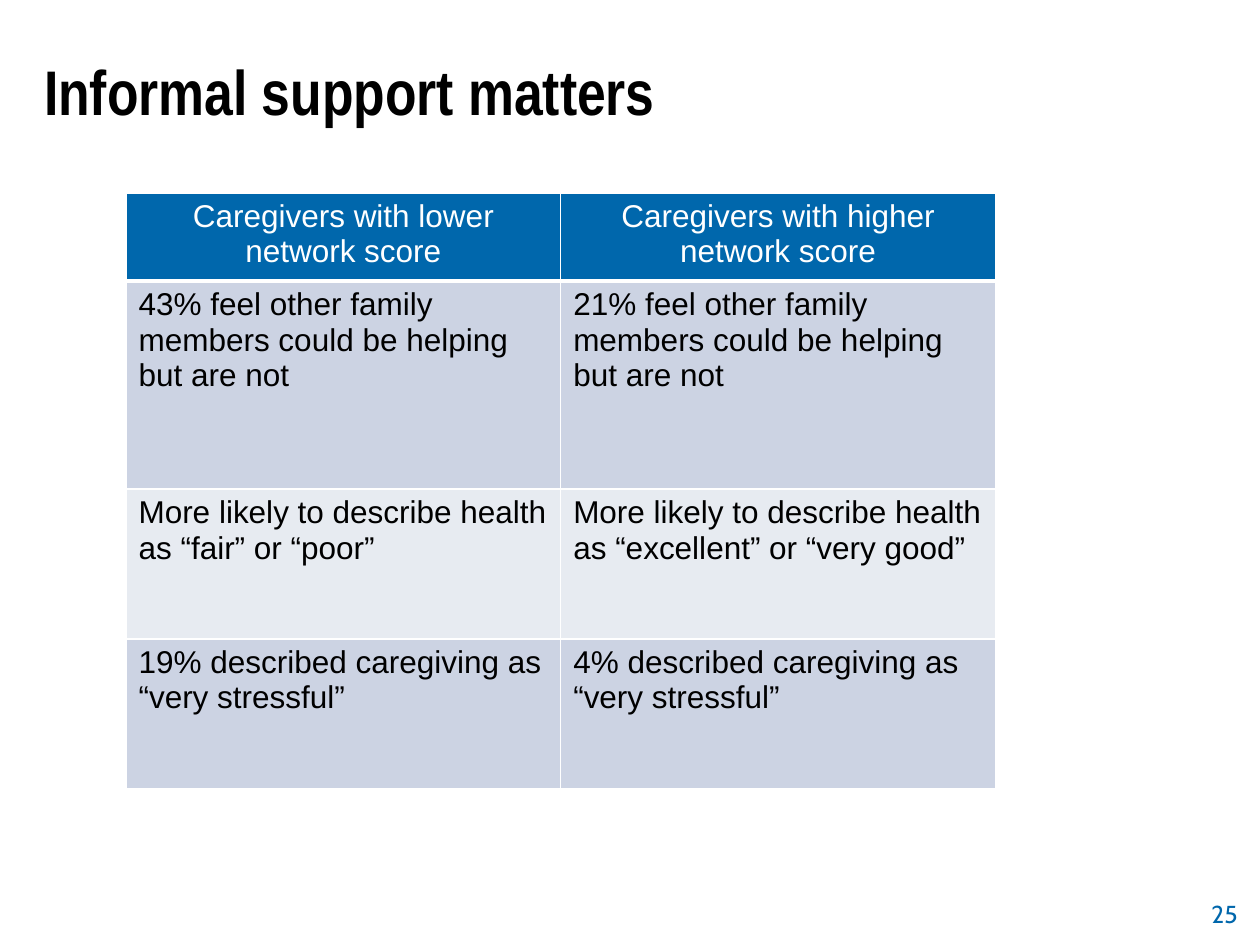
from dataclasses import dataclass

from lxml.etree import SubElement
from pptx import Presentation
from pptx.dml.color import RGBColor
from pptx.enum.text import MSO_ANCHOR, PP_ALIGN
from pptx.oxml.ns import qn
from pptx.util import Inches, Pt


@dataclass(frozen=True)
class Theme:
    blue: str = "0067AC"
    white: str = "FFFFFF"
    black: str = "000000"
    bands: tuple = ("CCD3E3", "E7EBF1")
    title_size: int = 36
    body_size: int = 18
    number_size: int = 14
    title_font: str = "Arial Narrow"
    body_font: str = "Arial"
    number_font: str = "Cabin"
    rule: float = 1
    header_rule: float = 3


theme = Theme()
presentation = Presentation()
presentation.slide_width = Inches(10)
presentation.slide_height = Inches(7.5)
slide = presentation.slides.add_slide(presentation.slide_layouts[6])


def write(frame, text, font, size, color, align=PP_ALIGN.LEFT, bold=False):
    frame.word_wrap = True
    paragraph = frame.paragraphs[0]
    paragraph.text = text
    paragraph.alignment = align
    paragraph.font.name = font
    paragraph.font.size = Pt(size)
    paragraph.font.bold = bold
    paragraph.font.color.rgb = RGBColor.from_string(color)


def add_border(cell, side, width):
    line = SubElement(cell._tc.get_or_add_tcPr(), qn(f"a:{side}"), w=str(Pt(width)))
    fill = SubElement(line, qn("a:solidFill"))
    SubElement(fill, qn("a:srgbClr"), val=theme.white)


title = slide.shapes.add_textbox(Inches(0.35), Inches(0.3), Inches(8), Inches(0.72)).text_frame
title.margin_left = title.margin_top = title.margin_right = title.margin_bottom = 0
title.vertical_anchor = MSO_ANCHOR.BOTTOM
write(title, "Informal support matters", theme.title_font, theme.title_size, theme.black, bold=True)

findings = [
    ("Caregivers with lower network score", "Caregivers with higher network score"),
    (
        "43% feel other family members could be helping but are not",
        "21% feel other family members could be helping but are not",
    ),
    (
        "More likely to describe health as “fair” or “poor”",
        "More likely to describe health as “excellent” or “very good”",
    ),
    ("19% described caregiving as “very stressful”", "4% described caregiving as “very stressful”"),
]
row_heights = [0.66, 1.65, 1.19, 1.19]
comparison = slide.shapes.add_table(
    len(findings), 2, Inches(1), Inches(1.53), Inches(6.9), Inches(sum(row_heights))
).table

for row, (height, texts) in enumerate(zip(row_heights, findings)):
    comparison.rows[row].height = Inches(height)
    is_header = row == 0
    background = theme.blue if is_header else theme.bands[(row - 1) % 2]
    for column, text in enumerate(texts):
        cell = comparison.cell(row, column)
        write(
            cell.text_frame,
            text,
            theme.body_font,
            theme.body_size,
            theme.white if is_header else theme.black,
            PP_ALIGN.CENTER if is_header else PP_ALIGN.LEFT,
        )
        for side in ("lnL", "lnR", "lnT", "lnB"):
            add_border(cell, side, theme.header_rule if is_header and side == "lnB" else theme.rule)
        cell.fill.solid()
        cell.fill.fore_color.rgb = RGBColor.from_string(background)

page_number = slide.shapes.add_textbox(Inches(7.84), Inches(6.92), Inches(2.08), Inches(0.5)).text_frame
page_number.vertical_anchor = MSO_ANCHOR.BOTTOM
write(page_number, "25", theme.number_font, theme.number_size, theme.blue, PP_ALIGN.RIGHT)

presentation.save("out.pptx")
